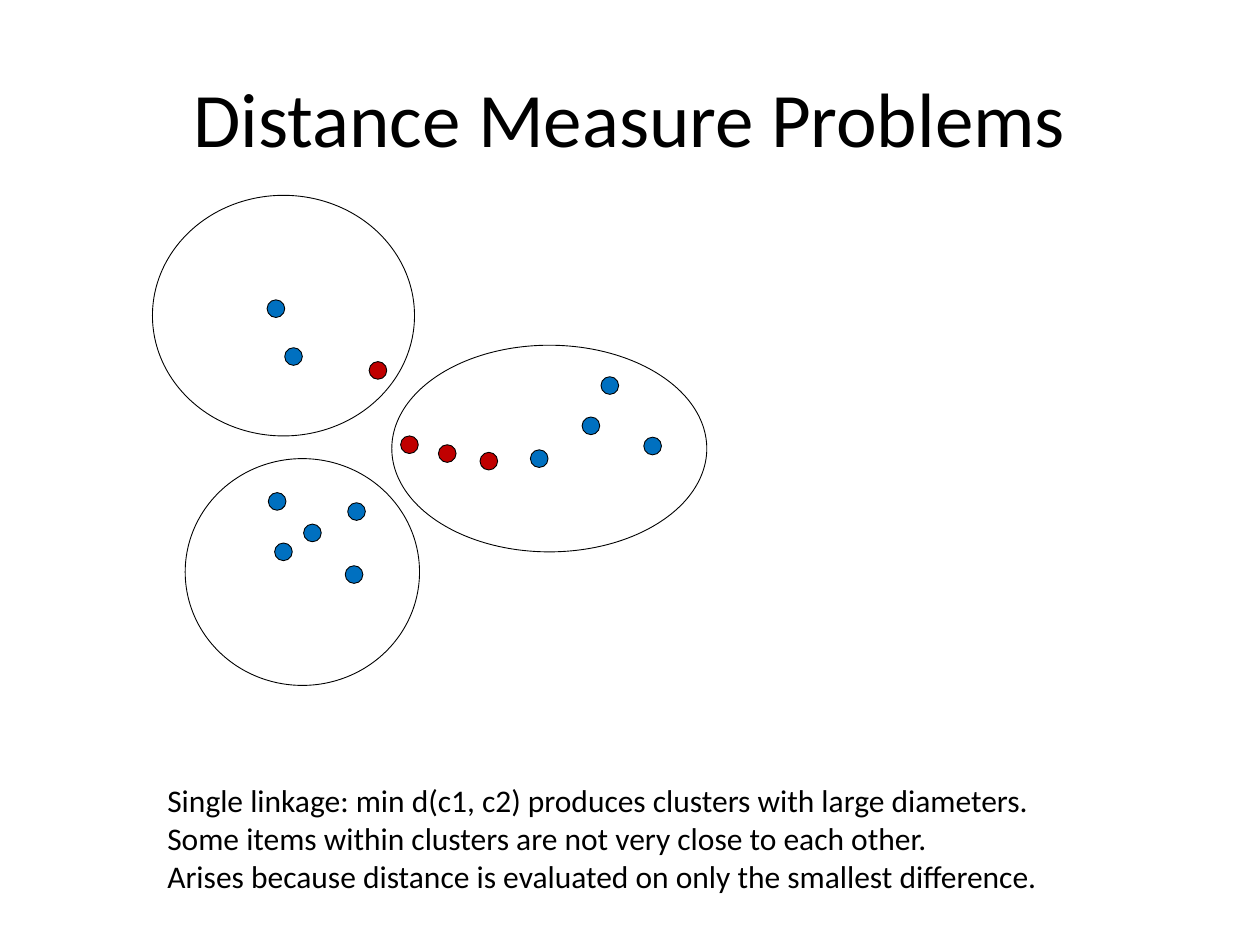
from pptx import Presentation
from pptx.dml.color import RGBColor
from pptx.enum.shapes import MSO_SHAPE as Shape
from pptx.enum.text import MSO_ANCHOR as Anchor, PP_ALIGN as Align
from pptx.util import Inches, Pt

COLORS = {"ink": "000000", "near": "0070C0", "bridge": "C00000"}
DOT_SIZE = 0.14

CLUSTERS = [
    (1.21, 1.55, 2.08, 1.91),
    (3.11, 2.74, 2.5, 1.64),
    (1.47, 3.64, 1.86, 1.8),
]
# Left and top of each item; the bridge items lie close to another cluster.
ITEMS = {
    "near": [
        (4.77, 2.99), (4.62, 3.31), (5.11, 3.47), (4.21, 3.57),
        (2.76, 3.99), (2.13, 3.91), (2.18, 4.31), (2.41, 4.16), (2.74, 4.49),
        (2.26, 2.76), (2.12, 2.38),
    ],
    "bridge": [(2.93, 2.87), (3.18, 3.46), (3.48, 3.53), (3.81, 3.59)],
}
NOTES = [
    "Single linkage: min d(c1, c2) produces clusters with large diameters.",
    "Some items within clusters are not very close to each other.",
    "Arises because distance is evaluated on only the smallest difference.",
]


class SlideBuilder:
    """Holds the current slide and the style shared by its elements."""

    font = "Calibri"
    line_width = Pt(0.5)

    def __init__(self, slide):
        self.slide = slide

    def color(self, name):
        return RGBColor.from_string(COLORS[name])

    def text(self, lines, left, top, width, height, size,
             align=Align.LEFT, anchor=Anchor.TOP):
        box = self.slide.shapes.add_textbox(
            Inches(left), Inches(top), Inches(width), Inches(height))
        frame = box.text_frame
        frame.word_wrap = True
        frame.vertical_anchor = anchor
        for index, line in enumerate(lines):
            para = frame.add_paragraph() if index else frame.paragraphs[0]
            para.alignment = align
            span = para.add_run()
            span.text = line
            span.font.name = self.font
            span.font.size = Pt(size)
            span.font.color.rgb = self.color("ink")

    def ellipse(self, left, top, width, height, fill=None):
        shape = self.slide.shapes.add_shape(
            Shape.OVAL, Inches(left), Inches(top), Inches(width), Inches(height))
        shape.shadow.inherit = False
        shape.line.color.rgb = self.color("ink")
        shape.line.width = self.line_width
        if fill:
            shape.fill.solid()
            shape.fill.fore_color.rgb = self.color(fill)
        else:
            shape.fill.background()

    def dot(self, left, top, fill):
        self.ellipse(left, top, DOT_SIZE, DOT_SIZE, fill)


def main():
    deck = Presentation()
    deck.slide_width, deck.slide_height = Inches(10), Inches(7.5)
    page = SlideBuilder(deck.slides.add_slide(deck.slide_layouts[6]))

    page.text(["Distance Measure Problems"], 0.5, 0.3, 9, 1.25, 44,
              Align.CENTER, Anchor.MIDDLE)
    page.text(NOTES, 1.23, 6.15, 7.74, 1.01, 18)
    for cluster in CLUSTERS:
        page.ellipse(*cluster)
    for fill, positions in ITEMS.items():
        for left, top in positions:
            page.dot(left, top, fill)

    deck.save("out.pptx")


if __name__ == "__main__":
    main()
